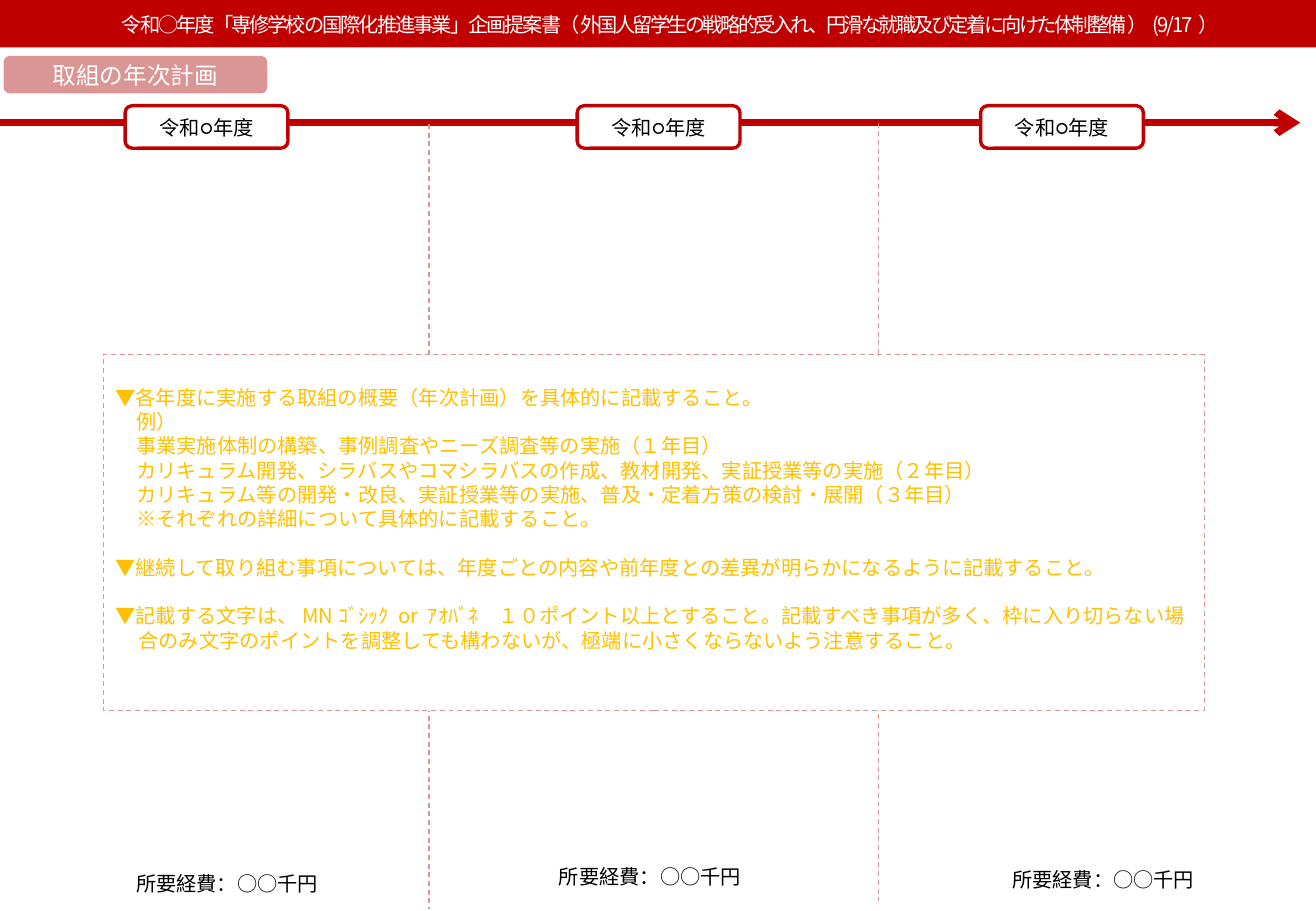
"""Build the yearly plan slide of a project proposal."""
from lxml.etree import SubElement
from pptx import Presentation
from pptx.dml.color import RGBColor
from pptx.enum.dml import MSO_LINE
from pptx.enum.shapes import MSO_CONNECTOR, MSO_SHAPE
from pptx.enum.text import MSO_ANCHOR, MSO_AUTO_SIZE, PP_ALIGN
from pptx.oxml.ns import qn
from pptx.util import Inches, Pt

RED, PINK, GOLD, WHITE, BLACK = "C00000", "D99694", "FFC000", "FFFFFF", "000000"
NOTO, LATO = "Noto Sans CJK JP", "Lato"


def paint(color_format, value):
    """Set a fill or line format to a solid hex colour."""
    color_format.solid()
    color_format.fore_color.rgb = RGBColor.from_string(value)


def add_run(p, text, color, font=NOTO, size=12, spacing=None):
    """Add one run with the same Latin and East Asian font."""
    r = p.add_run()
    r.text = text
    r.font.size = Pt(size)
    r.font.name = font
    paint(r.font.fill, color)
    rPr = r.font._element
    SubElement(rPr, qn("a:ea")).set("typeface", font)
    if spacing is not None:
        rPr.set("spc", str(spacing))


prs = Presentation()
prs.slide_width, prs.slide_height = Inches(10.83), Inches(7.5)
s = prs.slides.add_slide(prs.slide_layouts[1])
title, body = s.shapes.title, s.placeholders[1]

lines = [
    (0, 1.01, 10.7, 1.01, RED, 4.5),
    (3.53, 1.02, 3.53, 7.48, PINK, 0.75),
    (7.23, 1.01, 7.23, 7.42, PINK, 0.75),
]
for x1, y1, x2, y2, color, width in lines:
    line = s.shapes.add_connector(
        MSO_CONNECTOR.STRAIGHT, Inches(x1), Inches(y1), Inches(x2), Inches(y2))
    paint(line.line.fill, color)
    line.line.width = Pt(width)
    if color == RED:
        SubElement(line.line._get_or_add_ln(), qn("a:tailEnd")).set("type", "arrow")
    else:
        line.line.dash_style = MSO_LINE.DASH
    SubElement(line.element.spPr, qn("a:effectLst"))

boxes = [
    (MSO_SHAPE.RECTANGLE, 0, 0, 10.83, 0.39, RED, None, "", NOTO, 12, WHITE),
    (MSO_SHAPE.ROUNDED_RECTANGLE, 0.03, 0.46, 2.17, 0.31, PINK, None,
     "取組の年次計画", NOTO, 14, WHITE),
]
for x in (1.03, 4.75, 8.07):
    boxes.append((MSO_SHAPE.ROUNDED_RECTANGLE, x, 0.87, 1.34, 0.35, WHITE, RED,
                  "令和○年度", LATO, 12, BLACK))
for kind, x, y, w, h, fill, outline, text, font, size, color in boxes:
    sp = s.shapes.add_shape(kind, Inches(x), Inches(y), Inches(w), Inches(h))
    sp.shadow.inherit = False
    paint(sp.fill, fill)
    if outline:
        paint(sp.line.fill, outline)
        sp.line.width = Pt(2)
    else:
        sp.line.fill.background()
    if text:
        tf = sp.text_frame
        tf.vertical_anchor = MSO_ANCHOR.MIDDLE
        tf.paragraphs[0].alignment = PP_ALIGN.CENTER
        add_run(tf.paragraphs[0], text, color, font, size)

for x, y in ((0.12, 7.12), (3.6, 7.07), (7.33, 7.09)):
    sp = s.shapes.add_textbox(Inches(x), Inches(y), Inches(3.5), Inches(0.3))
    tf = sp.text_frame
    tf.word_wrap = True
    p = tf.paragraphs[0]
    p.alignment = PP_ALIGN.CENTER
    p.line_spacing = Pt(14.4)
    add_run(p, "所要経費：○○千円", BLACK)

s.shapes.element.append(title.element)
title.left, title.top = Inches(0.5), Inches(0.05)
title.width, title.height = Inches(10.03), Inches(0.3)
tf = title.text_frame
tf.auto_size = MSO_AUTO_SIZE.NONE
tf.vertical_anchor = MSO_ANCHOR.MIDDLE
p = tf.paragraphs[0]
p.alignment = PP_ALIGN.CENTER
p.line_spacing = Pt(14.4)
for text, spacing in (
    ("令和○年度「専修学校の国際化推進事業」企画提案書（", -120),
    ("外国人留学生の戦略的受入れ、円滑な就職及び定着に向けた体制整備", -160),
    ("）(9/17）", -120),
):
    add_run(p, text, WHITE, spacing=spacing)

s.shapes.element.append(body.element)
body.left, body.top = Inches(0.85), Inches(2.92)
body.width, body.height = Inches(9.06), Inches(2.93)
paint(body.fill, WHITE)
paint(body.line.fill, PINK)
body.line.width = Pt(0.75)
body.line.dash_style = MSO_LINE.DASH
tf = body.text_frame
tf.auto_size = MSO_AUTO_SIZE.NONE
tf.vertical_anchor = MSO_ANCHOR.TOP
tf.margin_top = Inches(0.25)
notes = [
    ("▼各年度に実施する取組の概要（年次計画）を具体的に記載すること。", 0.19, -0.19, 0),
    ("例）", 0.17, 0, 0),
    ("事業実施体制の構築、事例調査やニーズ調査等の実施（１年目）", 0.17, 0, 0),
    ("カリキュラム開発、シラバスやコマシラバスの作成、教材開発、実証授業等の実施（２年目）", 0.17, 0, 0),
    ("カリキュラム等の開発・改良、実証授業等の実施、普及・定着方策の検討・展開（３年目）", 0.17, 0, 0),
    ("※それぞれの詳細について具体的に記載すること。", 0.17, 0, 0),
    ("▼継続して取り組む事項については、年度ごとの内容や前年度との差異が明らかになるように記載すること。",
     0.19, -0.19, 14.4),
    ("▼記載する文字は、MNｺﾞｼｯｸ or ｱｵﾊﾞﾈ　１０ポイント以上とすること。記載すべき事項が多く、"
     "枠に入り切らない場合のみ文字のポイントを調整しても構わないが、"
     "極端に小さくならないよう注意すること。", 0.19, -0.19, 14.4),
]
for i, (text, margin, indent, before) in enumerate(notes):
    p = tf.paragraphs[0] if i == 0 else tf.add_paragraph()
    p.alignment = PP_ALIGN.LEFT
    p.line_spacing = Pt(14.4)
    p.space_before = Pt(before)
    pPr = p._p.get_or_add_pPr()
    pPr.set("marL", str(Inches(margin)))
    pPr.set("indent", str(Inches(indent)))
    SubElement(pPr, qn("a:buNone"))
    add_run(p, text, GOLD)

prs.save("out.pptx")
